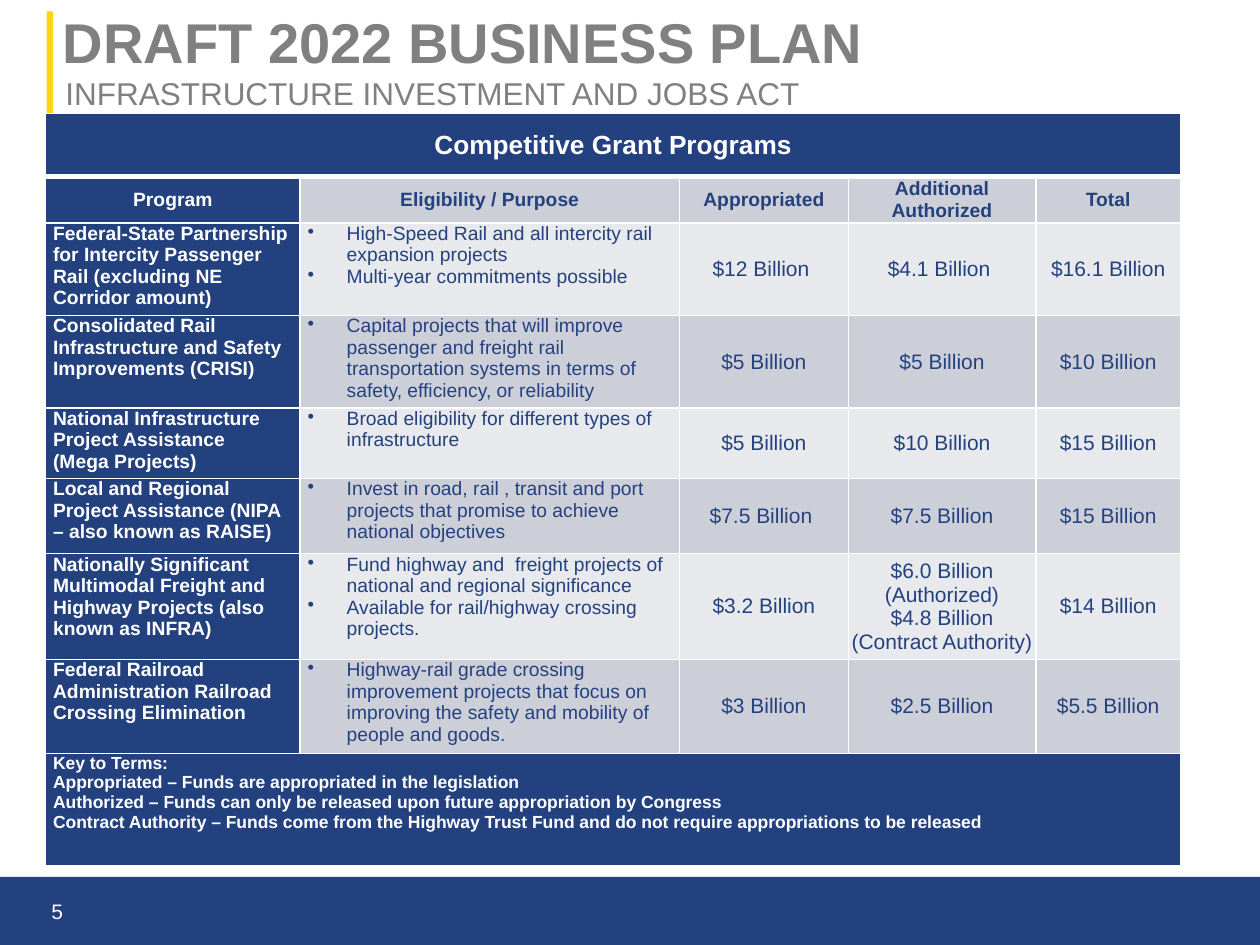
from lxml.etree import SubElement
from pptx import Presentation
from pptx.dml.color import RGBColor
from pptx.enum.shapes import MSO_SHAPE as Preset
from pptx.enum.text import MSO_ANCHOR as Anchor, PP_ALIGN as Align
from pptx.oxml.ns import qn
from pptx.util import Cm, Pt

COLORS = {
    "navy": "23417E",
    "footer": "23417F",
    "yellow": "FBD518",
    "gray": "808080",
    "white": "FFFFFF",
    "dark_band": "CDCFD8",
    "light_band": "E8E9EC",
}
FONT = "Arial"
COLUMN_WIDTHS = [5.13, 7.65, 3.4, 3.78, 2.92]
ROW_HEIGHTS = [1.27, 0.91, 1.35, 1.8, 1.42, 1.52, 2.13, 1.9, 2.26]
HEADINGS = ["Program", "Eligibility / Purpose", "Appropriated",
            "Additional Authorized", "Total"]
# Each program: name, purposes, appropriated, additional authorized, total
PROGRAMS = [
    (["Federal-State Partnership for Intercity Passenger Rail "
      "(excluding NE Corridor amount)"],
     ["High-Speed Rail and all intercity rail expansion projects",
      "Multi-year commitments possible"],
     ["$12 Billion "], ["$4.1 Billion "], ["$16.1 Billion"]),
    (["Consolidated Rail Infrastructure and Safety Improvements (CRISI)"],
     ["Capital projects that will improve passenger and freight rail "
      "transportation systems in terms of safety, efficiency, or reliability"],
     ["$5 Billion"], ["$5 Billion"], ["$10 Billion"]),
    (["National Infrastructure Project Assistance", "(Mega Projects)"],
     ["Broad eligibility for different types of infrastructure"],
     ["$5 Billion"], ["$10 Billion"], ["$15 Billion"]),
    (["Local and Regional Project Assistance (NIPA – also known as RAISE)"],
     ["Invest in road, rail , transit and port projects that promise to "
      "achieve national objectives"],
     ["$7.5 Billion "], [" $7.5 Billion "], ["$15 Billion"]),
    (["Nationally Significant Multimodal Freight and Highway Projects "
      "(also known as INFRA)"],
     ["Fund highway and  freight projects of national and regional significance",
      "Available for rail/highway crossing projects."],
     ["$3.2 Billion"],
     ["$6.0 Billion (Authorized)", "$4.8 Billion (Contract Authority)"],
     ["$14 Billion"]),
    (["Federal Railroad Administration Railroad Crossing Elimination"],
     ["Highway-rail grade crossing improvement projects that focus on "
      "improving the safety and mobility of people and goods."],
     ["$3 Billion"], ["$2.5 Billion"], ["$5.5 Billion"]),
]
KEY_TERMS = [
    "Key to Terms:",
    "Appropriated – Funds are appropriated in the legislation",
    "Authorized – Funds can only be released upon future appropriation by Congress",
    "Contract Authority – Funds come from the Highway Trust Fund and do not "
    "require appropriations to be released",
]


def rgb(name):
    return RGBColor.from_string(COLORS[name])


def add_bullet(paragraph):
    properties = paragraph._p.get_or_add_pPr()
    properties.set("marL", str(Cm(0.79)))
    properties.set("indent", str(-Cm(0.79)))
    SubElement(properties, qn("a:buChar"), char="•")


def write_lines(frame, lines, size, color, bold=False, align=Align.LEFT,
                bulleted=False):
    for index, line in enumerate(lines):
        paragraph = frame.add_paragraph() if index else frame.paragraphs[0]
        paragraph.alignment = align
        if bulleted:
            add_bullet(paragraph)
        run = paragraph.add_run()
        run.text = line
        run.font.name = FONT
        run.font.size = Pt(size)
        run.font.bold = bold
        run.font.color.rgb = rgb(color)


def add_bar(slide, left, top, width, height, color):
    bar = slide.shapes.add_shape(Preset.RECTANGLE, Cm(left), Cm(top),
                                 Cm(width), Cm(height))
    bar.shadow.inherit = False
    bar.fill.solid()
    bar.fill.fore_color.rgb = rgb(color)
    bar.line.fill.background()


def add_text(slide, left, top, width, height, text, size, color,
             anchor=Anchor.MIDDLE, margin_top=0.13, **style):
    box = slide.shapes.add_textbox(Cm(left), Cm(top), Cm(width), Cm(height))
    frame = box.text_frame
    frame.word_wrap = True
    frame.vertical_anchor = anchor
    frame.margin_top = Cm(margin_top)
    write_lines(frame, [text], size, color, **style)


def set_borders(cell, bottom=1):
    properties = cell._tc.get_or_add_tcPr()
    for side, points in (("L", 1), ("R", 1), ("T", 1), ("B", bottom)):
        line = SubElement(properties, qn(f"a:ln{side}"), w=str(Pt(points)))
        fill = SubElement(line, qn("a:solidFill"))
        SubElement(fill, qn("a:srgbClr"), val=COLORS["white"])


def fill_cell(cell, lines, fill, size=11, color="white", anchor=Anchor.MIDDLE,
              side_margin=0.15, border_bottom=1, **style):
    set_borders(cell, border_bottom)
    cell.fill.solid()
    cell.fill.fore_color.rgb = rgb(fill)
    cell.vertical_anchor = anchor
    cell.margin_left = cell.margin_right = Cm(side_margin)
    cell.margin_top = cell.margin_bottom = 0
    write_lines(cell.text_frame, lines, size, color, **style)


def side_margin(column):
    """The two middle amount columns are set tight to their edges."""
    return 0.03 if column in (2, 3) else 0.15


def add_grants_table(slide):
    table = slide.shapes.add_table(
        len(ROW_HEIGHTS), len(COLUMN_WIDTHS), Cm(0.92), Cm(2.29),
        Cm(sum(COLUMN_WIDTHS)), Cm(sum(ROW_HEIGHTS))).table
    table.first_row = table.horz_banding = False
    for column, width in zip(table.columns, COLUMN_WIDTHS):
        column.width = Cm(width)
    for row, height in zip(table.rows, ROW_HEIGHTS):
        row.height = Cm(height)

    last_row, last_column = len(ROW_HEIGHTS) - 1, len(COLUMN_WIDTHS) - 1
    for row in (0, last_row):
        table.cell(row, 0).merge(table.cell(row, last_column))
    fill_cell(table.cell(0, 0), ["Competitive Grant Programs"], "navy", size=15,
              bold=True, align=Align.CENTER, border_bottom=3)
    fill_cell(table.cell(last_row, 0), KEY_TERMS, "navy", size=10, bold=True,
              anchor=Anchor.TOP)

    for column, heading in enumerate(HEADINGS):
        fill, color = ("dark_band", "navy") if column else ("navy", "white")
        fill_cell(table.cell(1, column), [heading], fill, color=color, bold=True,
                  align=Align.CENTER, side_margin=side_margin(column))

    for row, (name, purposes, *amounts) in enumerate(PROGRAMS, start=2):
        band = "dark_band" if row % 2 else "light_band"
        fill_cell(table.cell(row, 0), name, "navy", bold=True, anchor=Anchor.TOP)
        fill_cell(table.cell(row, 1), purposes, band, color="navy",
                  anchor=Anchor.TOP, bulleted=True)
        for column, amount in enumerate(amounts, start=2):
            fill_cell(table.cell(row, column), amount, band, size=12, color="navy",
                      align=Align.CENTER, side_margin=side_margin(column))


def main():
    deck = Presentation()
    deck.slide_width, deck.slide_height = Cm(25.4), Cm(19.05)
    slide = deck.slides.add_slide(deck.slide_layouts[6])

    add_bar(slide, 0, 17.68, 25.4, 1.37, "footer")
    add_bar(slide, 0.94, 0.23, 0.13, 2.11, "yellow")
    add_text(slide, 1.07, 1.3, 23.37, 1.17, "INFRASTRUCTURE INVESTMENT AND JOBS ACT",
             18, "gray", anchor=Anchor.TOP, margin_top=0.19)
    add_grants_table(slide)
    add_text(slide, 0.3, 17.86, 1.22, 1.02, "5", 12, "white", align=Align.RIGHT)
    add_text(slide, 1.02, 0.38, 23.37, 0.91, "DRAFT 2022 BUSINESS PLAN",
             32, "gray", bold=True)
    deck.save("out.pptx")


if __name__ == "__main__":
    main()
